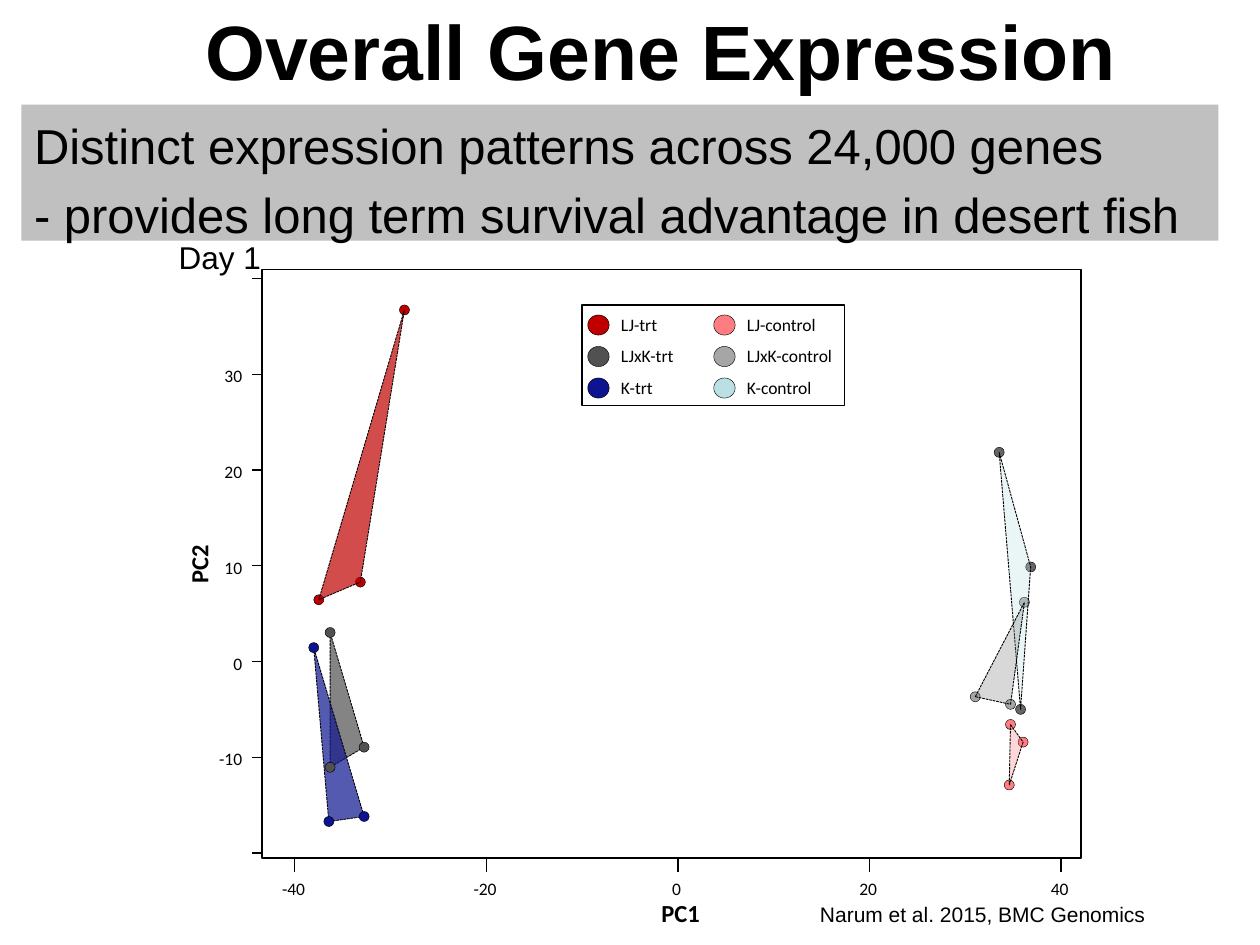
from lxml import etree
from pptx import Presentation
from pptx import util as u
from pptx.dml.color import RGBColor
from pptx.enum import dml, shapes, text
from pptx.oxml import ns

THEME = {
    "ink": "000000", "band": "969696",
    "red": "C00000", "charcoal": "515151", "navy": "0E1490",
    "pink": "FF7C80", "silver": "A6A6A6", "ice": "BBE0E3",
    "slate": "666666", "grey": "808080",
    "heading": "Arial", "labels": "Calibri",
    "title": 44, "body": 28, "day": 18, "axis": 14, "source": 12, "tick": 10,
}

TITLE = "Overall Gene Expression"
POINTS = ["Distinct expression patterns across 24,000 genes",
          "- provides long term survival advantage in desert fish"]
DAY = "Day 1"
SOURCE = "Narum et al. 2015, BMC Genomics"

# dot colour, hull colour, hull opacity, dot centres in inches
TREATED = [
    ("charcoal", "charcoal", 70, [(2.62, 5.02), (2.62, 6.09), (2.89, 5.93)]),
    ("navy", "navy", 70, [(2.49, 5.14), (2.61, 6.52), (2.89, 6.48)]),
]
LJ_AND_CONTROL = [
    ("red", "red", 70, [(3.21, 2.46), (2.53, 4.76), (2.86, 4.62)]),
    ("slate", "ice", 30, [(7.93, 3.59), (8.18, 4.5), (8.1, 5.63)]),
    ("silver", "grey", 30, [(7.74, 5.53), (8.02, 5.59), (8.13, 4.78)]),
    ("pink", "pink", 30, [(8.02, 5.75), (8.12, 5.89), (8.01, 6.23)]),
]
LEGEND = [
    [("LJ-trt", "red"), ("LJxK-trt", "charcoal"), ("K-trt", "navy")],
    [("LJ-control", "pink"), ("LJxK-control", "silver"), ("K-control", "ice")],
]
X_TICKS = ["-40", "-20", "0", "20", "40"]
Y_TICKS = ["", "30", "20", "10", "0", "-10", ""]
PLOT = (2.08, 2.14, 6.5, 4.67)
LEGEND_FRAME = (4.62, 2.42, 2.08, 0.8)

prs = Presentation()
prs.slide_width, prs.slide_height = u.Inches(10), u.Inches(7.5)
slide = prs.slides.add_slide(prs.slide_layouts[1])


def inches(box):
    return [u.Inches(length) for length in box]


def colour(name):
    return RGBColor.from_string(THEME[name])


def paint(part, name, opacity=100):
    part.fill.solid()
    part.fill.fore_color.rgb = colour(name)
    if opacity < 100:
        tint = part.fill._xPr.find(".//" + ns.qn("a:srgbClr"))
        etree.SubElement(tint, ns.qn("a:alpha"), val=str(opacity * 1000))


def outline(part, width):
    part.line.color.rgb = colour("ink")
    part.line.width = u.Pt(width)


def style(paragraph, size, face, bold=False):
    for run in paragraph.runs:
        run.font.size = u.Pt(THEME[size])
        run.font.name = THEME[face]
        run.font.bold = bold
        run.font.color.rgb = colour("ink")


def label(words, box, size="tick", face="labels", bold=False, align=text.PP_ALIGN.LEFT):
    caption = slide.shapes.add_textbox(*inches(box))
    caption.text_frame.word_wrap = True
    caption.text_frame.text = words
    paragraph = caption.text_frame.paragraphs[0]
    paragraph.alignment = align
    style(paragraph, size, face, bold)
    return caption


def dot(x, y, width, height, name):
    marker = slide.shapes.add_shape(
        shapes.MSO_SHAPE.OVAL, *inches((x - width / 2, y - height / 2, width, height)))
    marker.shadow.inherit = False
    paint(marker, name)
    outline(marker, 0.25)


def hull(name, opacity, centres):
    corners = [tuple(inches(centre)) for centre in centres]
    builder = slide.shapes.build_freeform(*corners[0], scale=1.0)
    builder.add_line_segments(corners[1:], close=True)
    area = builder.convert_to_shape()
    area.shadow.inherit = False
    paint(area, name, opacity)
    outline(area, 0.5)
    area.line.dash_style = dml.MSO_LINE.SQUARE_DOT


def frame(box, width):
    border = slide.shapes.add_shape(shapes.MSO_SHAPE.RECTANGLE, *inches(box))
    border.shadow.inherit = False
    border.fill.background()
    outline(border, width)


def tick(x1, y1, x2, y2):
    mark = slide.shapes.add_connector(
        shapes.MSO_CONNECTOR.STRAIGHT, *inches((x1, y1, x2, y2)))
    outline(mark, 0.75)
    etree.SubElement(mark._element.spPr, ns.qn("a:effectLst"))


def place(holder, box, anchor):
    holder.left, holder.top, holder.width, holder.height = inches(box)
    holder.text_frame.auto_size = text.MSO_AUTO_SIZE.NONE
    holder.text_frame.vertical_anchor = anchor


title, body = slide.placeholders
place(title, (0.75, -0.08, 9, 0.95), text.MSO_ANCHOR.MIDDLE)
title.text_frame.text = TITLE
title.text_frame.paragraphs[0].alignment = text.PP_ALIGN.CENTER
style(title.text_frame.paragraphs[0], "title", "heading", True)

place(body, (0.17, 0.83, 9.5, 1.08), text.MSO_ANCHOR.TOP)
paint(body, "band", 60)
body.text_frame.margin_top, body.text_frame.margin_bottom = u.Inches(0.09), 0
body.text_frame.text = "\n".join(POINTS)
for order, point in enumerate(body.text_frame.paragraphs):
    properties = point._p.get_or_add_pPr()
    properties.set("marL", "0")
    properties.set("indent", "0")
    etree.SubElement(properties, ns.qn("a:buNone"))
    point.space_before = u.Pt(5.6 if order else 0)
    style(point, "body", "heading")

for _, area_colour, opacity, centres in TREATED:
    hull(area_colour, opacity, centres)
for dot_colour, _, _, centres in TREATED + LJ_AND_CONTROL:
    for x, y in centres:
        dot(x, y, 0.08, 0.08, dot_colour)

frame(PLOT, 1)
for step, value in enumerate(X_TICKS):
    x = 2.34 + 1.52 * step
    tick(x, 6.82, x, 6.92)
    label(value, (x - 0.26, 6.92, 0.5, 0.27), align=text.PP_ALIGN.CENTER)
for step, value in enumerate(Y_TICKS):
    y = 2.21 + 0.76 * step
    tick(2.07, y, 2, y)
    if value:
        label(value, (1.52, y - 0.12, 0.5, 0.27), align=text.PP_ALIGN.RIGHT)
label("PC1", (5.15, 7.08, 0.74, 0.34), "axis", bold=True)
label("PC2", (1.21, 4.19, 0.74, 0.34), "axis", bold=True).rotation = 270

for _, area_colour, opacity, centres in LJ_AND_CONTROL:
    hull(area_colour, opacity, centres)

for column, entries in enumerate(LEGEND):
    for row, (group, key_colour) in enumerate(entries):
        x, y = 4.75 + column, 2.58 + 0.25 * row
        dot(x, y, 0.17, 0.16, key_colour)
        label(group, (x + 0.08, y - 0.14, 0.95, 0.27))
frame(LEGEND_FRAME, 0.75)

label(DAY, (1.32, 1.84, 1.17, 0.41), "day", "heading")
label(SOURCE, (6.41, 7.11, 2.84, 0.3), "source", "heading")

prs.save("out.pptx")
